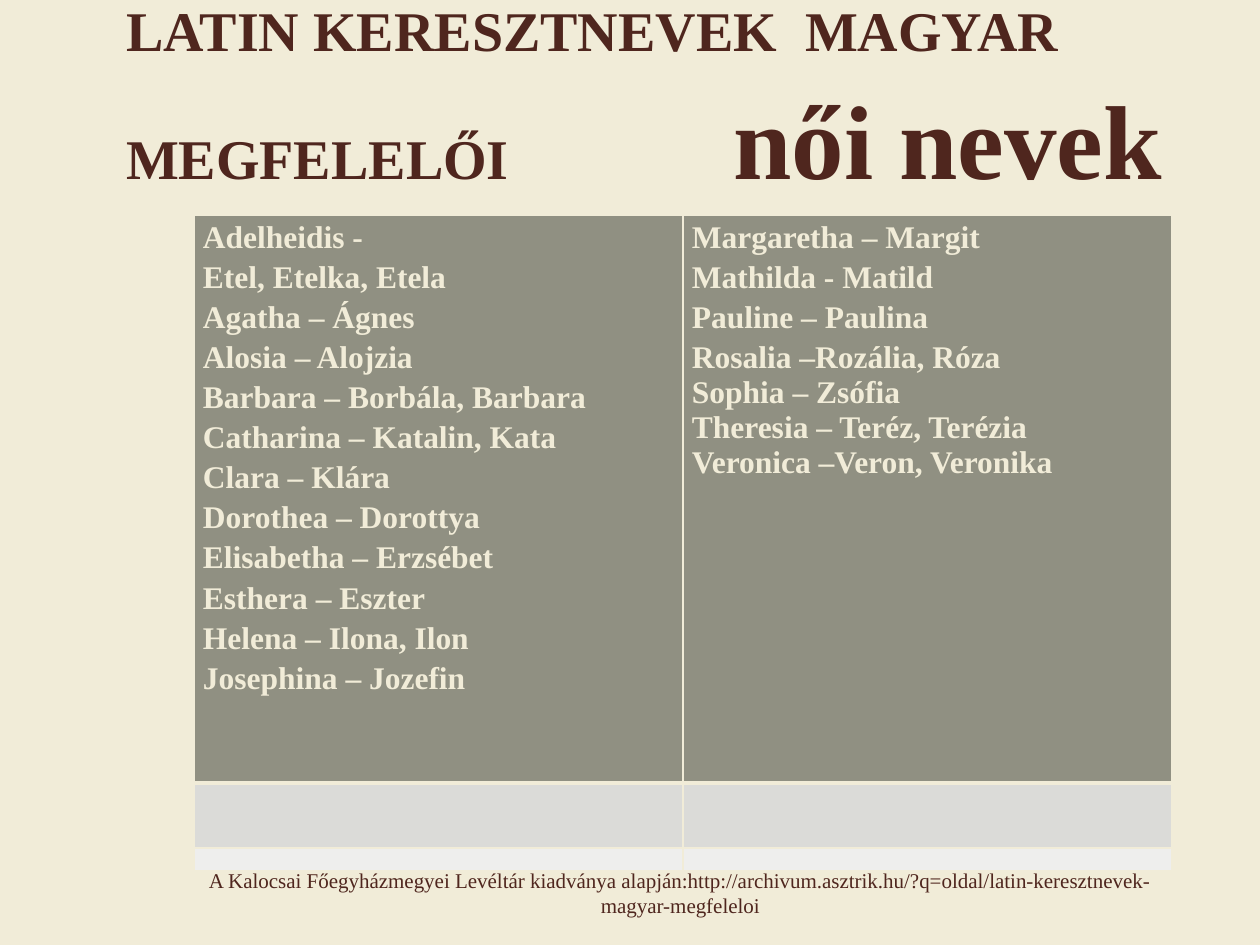
"""Builds a slide of Latin first names of women and their Hungarian forms."""
from lxml import etree
from pptx import Presentation
from pptx.dml.color import RGBColor
from pptx.enum.text import MSO_ANCHOR, MSO_AUTO_SIZE, PP_ALIGN
from pptx.oxml.ns import qn
from pptx.util import Pt

LEFT, MID = PP_ALIGN.LEFT, PP_ALIGN.CENTER
TOP, FIXED = MSO_ANCHOR.TOP, MSO_AUTO_SIZE.NONE
FONT = "Times New Roman"
PX = 914400 // 126
HUES = {"cream": "F1ECD8", "brown": "4F261E", "olive": "909082",
        "mist": "DBDBD8", "pale": "EEEEED"}

HEAD = [
    {"tab": (679, "l"), "runs": [("LATIN KERESZTNEVEK\tMAGYAR", 32)],
     "space": 0.95, "before": 0},
    {"tab": (1036, "r"), "runs": [("MEGFELELŐI\t", 32), ("női nevek", 60)],
     "space": 1, "before": 6},
]
NAMES = [
    ["Adelheidis -", "Etel, Etelka, Etela", "Agatha – Ágnes",
     "Alosia – Alojzia", "Barbara – Borbála, Barbara",
     "Catharina – Katalin, Kata", "Clara – Klára", "Dorothea – Dorottya",
     "Elisabetha – Erzsébet", "Esthera – Eszter", "Helena – Ilona, Ilon",
     "Josephina – Jozefin"],
    ["Margaretha – Margit", "Mathilda - Matild", "Pauline – Paulina",
     "Rosalia –Rozália, Róza", "Sophia – Zsófia",
     "Theresia – Teréz, Terézia", "Veronica –Veron, Veronika"],
]
TIGHT = NAMES[1][4:]
ROWS = [(568, "olive", 3), (65, "mist", 1), (23, "pale", 1)]
COL = 489
SOURCE = ("A Kalocsai Főegyházmegyei Levéltár kiadványa alapján:"
          "http://archivum.asztrik.hu/?q=oldal/latin-keresztnevek-"
          "magyar-megfeleloi")


def put(para, text, size=18, hue="brown", bold=True, align=LEFT, space=1,
        before=0):
    para.alignment = align
    para.line_spacing = space
    para.space_before = Pt(before)
    run = para.add_run()
    run.text = text
    font = run.font
    font.name, font.size, font.bold = FONT, Pt(size), bold
    font.color.rgb = RGBColor.from_string(HUES[hue])


def line(frame, num):
    return frame.paragraphs[0] if num == 0 else frame.add_paragraph()


def place(shape, *box):
    shape.left, shape.top, shape.width, shape.height = (n * PX for n in box)


def stop(para, at, side):
    tabs = etree.SubElement(para._p.get_or_add_pPr(), qn("a:tabLst"))
    etree.SubElement(tabs, qn("a:tab"), pos=str(at * PX), algn=side)


def edge(cell, side, width):
    props = cell._tc.get_or_add_tcPr()
    rule = etree.SubElement(props, qn(f"a:ln{side}"), w=str(Pt(width)))
    fill = etree.SubElement(rule, qn("a:solidFill"))
    etree.SubElement(fill, qn("a:srgbClr"), val=HUES["cream"])


def add_head(slide):
    title = slide.shapes.title
    place(title, 115, 0, 1082, 175)
    frame = title.text_frame
    frame.word_wrap, frame.auto_size = True, FIXED
    frame.vertical_anchor = TOP
    frame.margin_top = frame.margin_bottom = 0
    frame.margin_left = frame.margin_right = 11 * PX
    for num, item in enumerate(HEAD):
        para = line(frame, num)
        for text, size in item["runs"]:
            put(para, text, size=size, space=item["space"],
                before=item["before"])
        stop(para, *item["tab"])


def add_names(slide):
    high = sum(row[0] for row in ROWS)
    table = slide.shapes.add_table(
        len(ROWS), len(NAMES), 194 * PX, 215 * PX,
        COL * len(NAMES) * PX, high * PX).table
    for col in table.columns:
        col.width = COL * PX
    for num, (tall, hue, base) in enumerate(ROWS):
        table.rows[num].height = tall * PX
        roof = ROWS[num - 1][2] if num else 1
        for pos, names in enumerate(NAMES):
            cell = table.cell(num, pos)
            cell.margin_left = cell.margin_right = 9 * PX
            cell.margin_top = cell.margin_bottom = 0
            for side, width in zip("LRTB", (1, 1, roof, base)):
                edge(cell, side, width)
            cell.fill.solid()
            cell.fill.fore_color.rgb = RGBColor.from_string(HUES[hue])
            frame = cell.text_frame
            if num:
                etree.SubElement(frame.paragraphs[0]._p,
                                 qn("a:endParaRPr"), sz="800")
                continue
            for spot, name in enumerate(names):
                put(line(frame, spot), name, hue="cream",
                    space=1 if name in TIGHT else 1.15)


def add_source(slide):
    box = slide.shapes.add_textbox(194 * PX, 861 * PX, 973 * PX, 65 * PX)
    frame = box.text_frame
    frame.word_wrap = True
    put(frame.paragraphs[0], SOURCE, size=12, bold=False, align=MID)


def main():
    deck = Presentation()
    deck.slide_width, deck.slide_height = 1260 * PX, 945 * PX
    slide = deck.slides.add_slide(deck.slide_layouts[5])
    back = slide.background.fill
    back.solid()
    back.fore_color.rgb = RGBColor.from_string(HUES["cream"])
    add_head(slide)
    add_names(slide)
    add_source(slide)
    deck.save("out.pptx")


if __name__ == "__main__":
    main()
